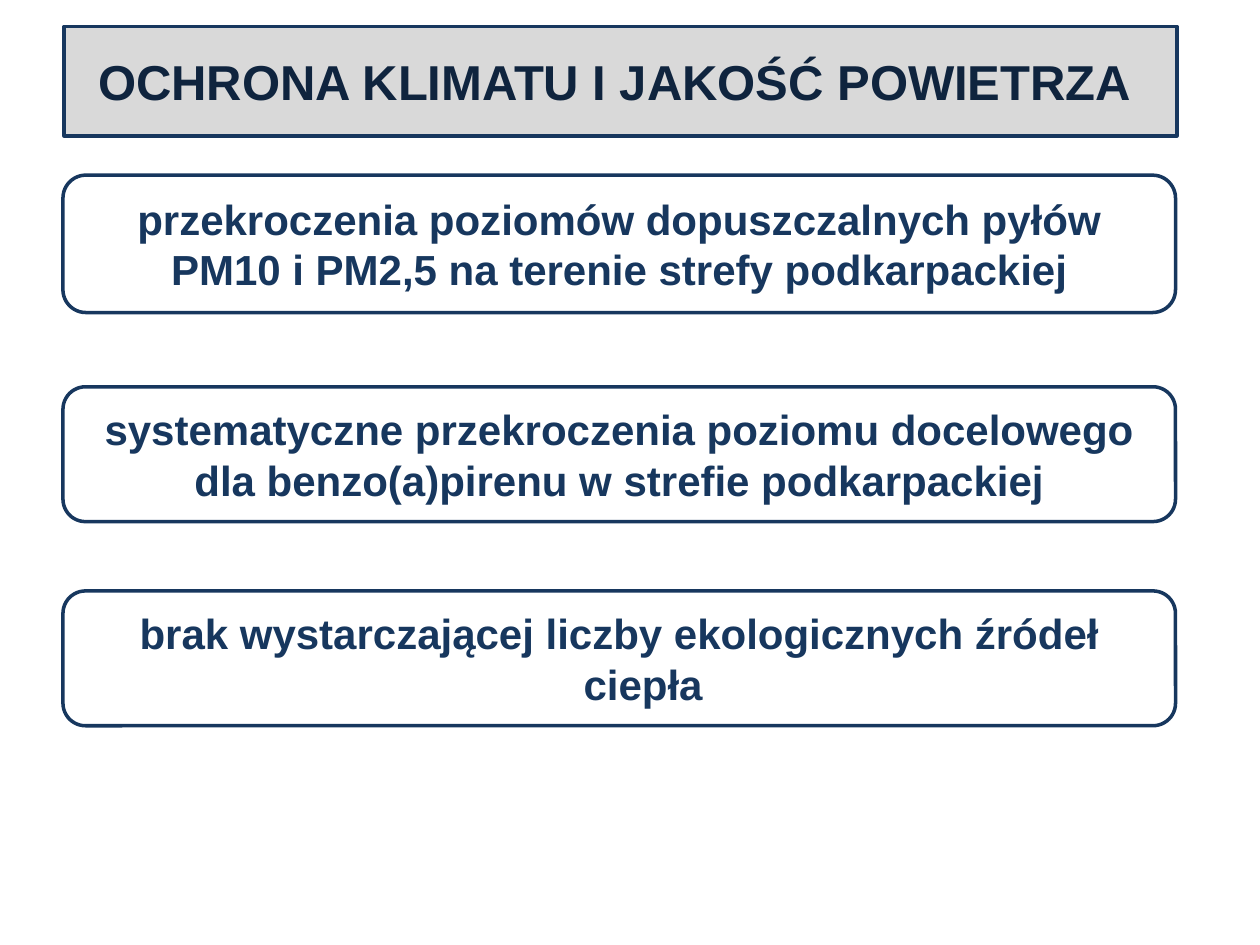
import pptx
import pptx.dml.color
import pptx.enum.shapes
import pptx.enum.text
import pptx.oxml
import pptx.oxml.ns
import pptx.util
from pptx.util import Inches

NAVY = pptx.dml.color.RGBColor(0x17, 0x37, 0x5E)
DARK_NAVY = pptx.dml.color.RGBColor(0x0F, 0x24, 0x3E)
GREY = pptx.dml.color.RGBColor(0xD9, 0xD9, 0xD9)
WHITE = pptx.dml.color.RGBColor(0xFF, 0xFF, 0xFF)

TITLE = "OCHRONA KLIMATU I JAKOŚĆ POWIETRZA "
# Text, top, height and hanging indent of each problem box
PROBLEMS = [
    ("przekroczenia poziomów dopuszczalnych pyłów PM10 i PM2,5 "
     "na terenie strefy podkarpackiej", 1.39, 1.09, 0),
    ("systematyczne przekroczenia poziomu docelowego dla benzo(a)pirenu "
     "w strefie podkarpackiej", 3.07, 1.07, 0),
    ("brak wystarczającej liczby ekologicznych źródeł ciepła", 4.69, 1.07, 0.38),
]


def style_box(box, text, fill, color, size):
    """Give a rounded box its fill, outline and centred bold text."""
    box.fill.solid()
    box.fill.fore_color.rgb = fill
    box.line.color.rgb = NAVY
    box.line.width = pptx.util.Pt(2)
    frame = box.text_frame
    frame.text = text
    frame.word_wrap = True
    frame.auto_size = pptx.enum.text.MSO_AUTO_SIZE.NONE
    frame.vertical_anchor = pptx.enum.text.MSO_ANCHOR.MIDDLE
    para = frame.paragraphs[0]
    para.alignment = pptx.enum.text.PP_ALIGN.CENTER
    font = para.runs[0].font
    font.name = "Arial"
    font.size = pptx.util.Pt(size)
    font.bold = True
    font.color.rgb = color


def place_title(page, left, top, width, height):
    title = page.shapes.title
    title.left, title.top, title.width, title.height = left, top, width, height
    # Rounded outline for the placeholder
    title.element.spPr.append(pptx.oxml.parse_xml(
        f'<a:prstGeom {pptx.oxml.ns.nsdecls("a")} prst="roundRect"><a:avLst/></a:prstGeom>'))
    style_box(title, TITLE, GREY, DARK_NAVY, 28)


def place_problem(page, text, left, top, width, height, indent):
    box = page.shapes.add_shape(
        pptx.enum.shapes.MSO_SHAPE.ROUNDED_RECTANGLE, left, top, width, height)
    box.shadow.inherit = False
    style_box(box, text, WHITE, NAVY, 24)
    if indent:
        properties = box.text_frame.paragraphs[0]._p.get_or_add_pPr()
        properties.set("marL", str(indent))
        properties.set("indent", str(-indent))


def main():
    deck = pptx.Presentation()
    deck.slide_width, deck.slide_height = Inches(10), Inches(7.5)
    page = deck.slides.add_slide(deck.slide_layouts[5])
    width = Inches(8.83)

    # Heading
    place_title(page, Inches(0.51), Inches(0.21), width, Inches(0.87))

    # Problem boxes
    for text, top, height, indent in PROBLEMS:
        place_problem(page, text, Inches(0.5), Inches(top), width,
                      Inches(height), Inches(indent))

    deck.save("out.pptx")


if __name__ == "__main__":
    main()
